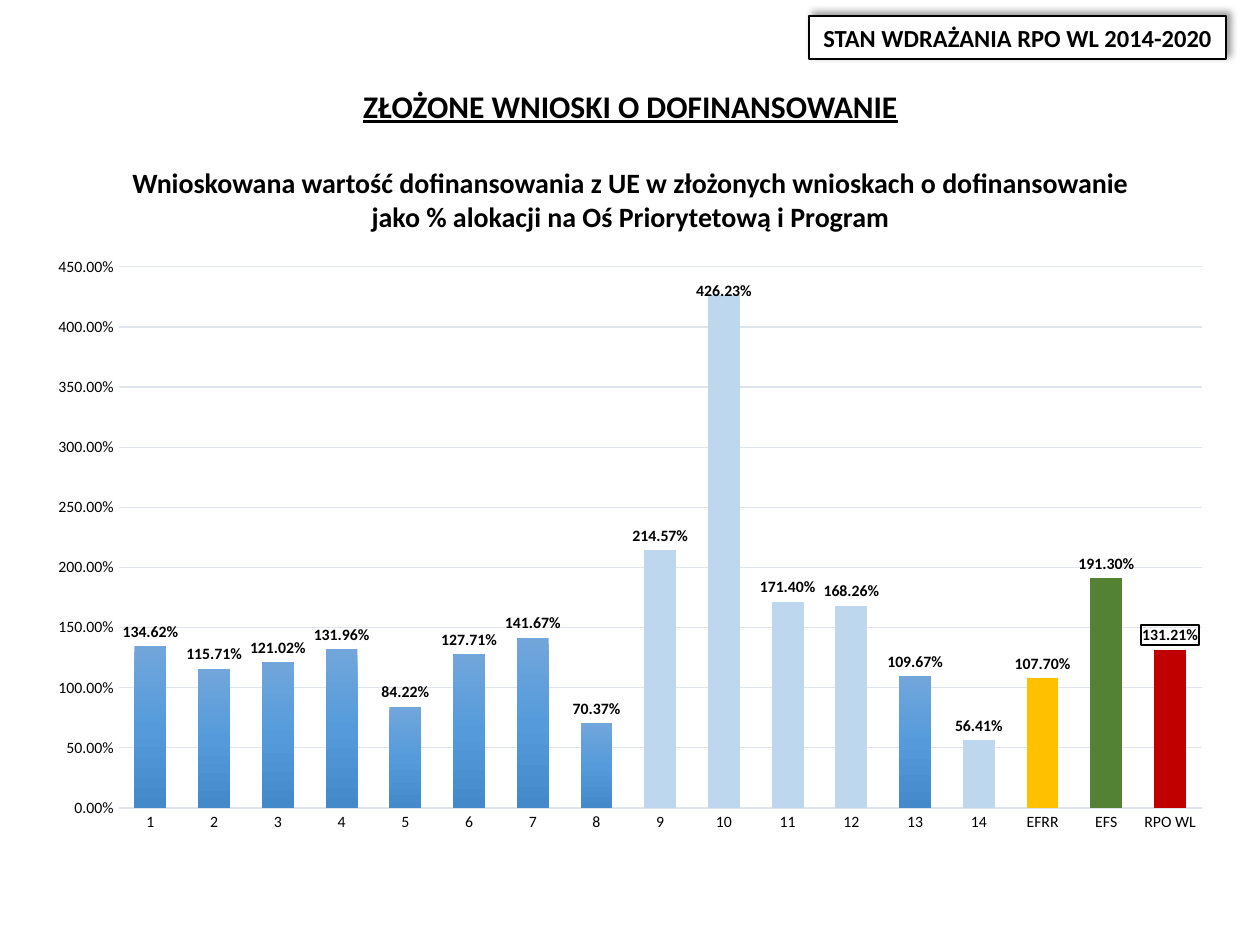
from lxml.etree import fromstring
from pptx import Presentation
from pptx.chart.data import CategoryChartData
from pptx.dml.color import RGBColor
from pptx.enum.chart import XL_CHART_TYPE, XL_LABEL_POSITION, XL_TICK_MARK
from pptx.enum.shapes import MSO_SHAPE
from pptx.enum.text import MSO_ANCHOR, MSO_AUTO_SIZE, PP_ALIGN
from pptx.oxml.ns import nsdecls
from pptx.util import Cm, Pt

FONT = "Calibri"
BLACK = RGBColor(0x00, 0x00, 0x00)
WHITE = RGBColor(0xFF, 0xFF, 0xFF)
GRID = RGBColor(0xE0, 0xE5, 0xEB)
LIGHT_BLUE = RGBColor(0xBD, 0xD7, 0xEE)
GOLD = RGBColor(0xFF, 0xC0, 0x00)
GREEN = RGBColor(0x54, 0x82, 0x35)
RED = RGBColor(0xC0, 0x00, 0x00)
GRADIENT_STOPS = (
    (0, RGBColor(0x71, 0xA6, 0xDB)),
    (50, RGBColor(0x55, 0x9B, 0xDB)),
    (100, RGBColor(0x44, 0x8A, 0xCA)),
)

LEFT, WIDTH = Cm(0.71), Cm(24)
PERCENT = "0.00%"
APPLICATIONS = {
    "1": 1.3462, "2": 1.1571, "3": 1.2102, "4": 1.3196, "5": 0.8422,
    "6": 1.2771, "7": 1.4167, "8": 0.7037, "9": 2.1457, "10": 4.2623,
    "11": 1.714, "12": 1.6826, "13": 1.0967, "14": 0.5641,
    "EFRR": 1.077, "EFS": 1.913, "RPO WL": 1.3121,
}
POINT_COLORS = {
    **dict.fromkeys(("9", "10", "11", "12", "14"), LIGHT_BLUE),
    "EFRR": GOLD, "EFS": GREEN, "RPO WL": RED,
}


def xml(markup):
    """Parse markup that uses the drawing and chart namespaces."""
    tag, rest = markup.split(">", 1)
    slash = "/" if tag.endswith("/") else ""
    return fromstring(f"{tag.rstrip('/')} {nsdecls('a', 'c')}{slash}>{rest}")


def format_font(font, size, bold=False, underline=None):
    """Apply the slide's typeface and text colour."""
    font.name = FONT
    font.size = Pt(size)
    font.bold = bold
    font.underline = underline
    font.color.rgb = BLACK


def write_text(text_frame, text, size, underline=None, line_spacing=None, space_after=0):
    """Write one bold centred paragraph, filling the empty first one if needed."""
    paragraph = text_frame.paragraphs[0]
    if paragraph.runs:
        paragraph = text_frame.add_paragraph()
    paragraph.alignment = PP_ALIGN.CENTER
    paragraph.line_spacing = line_spacing
    paragraph.space_after = Pt(space_after)
    run = paragraph.add_run()
    run.text = text
    format_font(run.font, size, bold=True, underline=underline)


def add_titles(slide):
    """Add the underlined heading and the chart title."""
    text_frame = slide.shapes.add_textbox(LEFT, Cm(1.52), WIDTH, Cm(3.33)).text_frame
    text_frame.word_wrap = True
    text_frame.auto_size = MSO_AUTO_SIZE.SHAPE_TO_FIT_TEXT
    write_text(text_frame, "ZŁOŻONE WNIOSKI O DOFINANSOWANIE", 18,
               underline=True, line_spacing=1.14, space_after=23.6)
    write_text(text_frame, "Wnioskowana wartość dofinansowania z UE "
               "w złożonych wnioskach o dofinansowanie", 16)
    write_text(text_frame, "jako % alokacji na Oś Priorytetową i Program", 16)


def add_banner(slide):
    """Add the framed programme banner with its shadow."""
    shape = slide.shapes.add_shape(
        MSO_SHAPE.RECTANGLE, Cm(16.31), Cm(0.33), Cm(8.41), Cm(0.86))
    shape.fill.solid()
    shape.fill.fore_color.rgb = WHITE
    shape.line.color.rgb = BLACK
    shape.line.width = Pt(1)
    shape.shadow.inherit = False
    shape.element.spPr.find(".//{*}effectLst").append(xml(
        f'<a:outerShdw blurRad="{Pt(4)}" dist="{Pt(3)}" dir="18900000" algn="bl" '
        f'rotWithShape="0"><a:srgbClr val="{BLACK}"><a:alpha val="40000"/>'
        '</a:srgbClr></a:outerShdw>'))
    text_frame = shape.text_frame
    text_frame.word_wrap = False
    text_frame.auto_size = MSO_AUTO_SIZE.SHAPE_TO_FIT_TEXT
    text_frame.vertical_anchor = MSO_ANCHOR.MIDDLE
    write_text(text_frame, "STAN WDRAŻANIA RPO WL 2014-2020", 14)


def format_axis(axis):
    """Remove tick marks and set the axis labels."""
    axis.major_tick_mark = axis.minor_tick_mark = XL_TICK_MARK.NONE
    format_font(axis.tick_labels.font, 9)


def format_line(line, color):
    """Give a chart line its colour and thin width."""
    line.color.rgb = color
    line.width = Pt(0.75)


def fill_columns(series):
    """Give the series its gradient and the special columns their colours."""
    stops = "".join(
        f'<a:gs pos="{position * 1000}"><a:srgbClr val="{color}"/></a:gs>'
        for position, color in GRADIENT_STOPS)
    series.format.fill.background()
    no_fill = series.format.fill._xPr.find("{*}noFill")
    no_fill.getparent().replace(no_fill, xml(
        f'<a:gradFill rotWithShape="1"><a:gsLst>{stops}</a:gsLst>'
        '<a:lin ang="5400000" scaled="0"/></a:gradFill>'))
    for index, category in enumerate(APPLICATIONS):
        if category in POINT_COLORS:
            fill = series.points[index].format.fill
            fill.solid()
            fill.fore_color.rgb = POINT_COLORS[category]


def add_labels(series):
    """Label the columns, lowering the tallest label and framing the total."""
    labels = series.data_labels
    labels.show_value = True
    labels.number_format = PERCENT
    labels.number_format_is_linked = False
    labels.position = XL_LABEL_POSITION.OUTSIDE_END
    format_font(labels.font, 9, bold=True)
    extras = {
        "10": ('<c:layout><c:manualLayout><c:x val="0"/><c:y val="0.016"/>'
               '</c:manualLayout></c:layout>',),
        "RPO WL": (f'<c:spPr><a:ln w="{Pt(1)}"><a:solidFill><a:srgbClr val="{BLACK}"/>'
                   '</a:solidFill></a:ln></c:spPr>',),
    }
    categories = list(APPLICATIONS)
    number_format = f'<c:numFmt formatCode="{PERCENT}" sourceLinked="0"/>'
    for category, (markup,) in extras.items():
        label = series.points[categories.index(category)].data_label
        format_font(label.font, 9, bold=True)
        label.position = XL_LABEL_POSITION.OUTSIDE_END
        element = label._dLbl
        for old in element.findall("{*}spPr"):
            element.remove(old)
        parts = [markup, number_format] if "layout" in markup else [number_format, markup]
        for part in parts:
            element.find("{*}txPr").addprevious(xml(part))


def set_plot_layout(chart):
    """Fix the inner plot area and give the chart a white ground."""
    sizes = {"x": 0.07, "y": 0.04, "w": 0.91, "h": 0.91}
    values = "".join(f'<c:{name} val="{size}"/>' for name, size in sizes.items())
    chart_space = chart._chartSpace
    plot_area = chart_space.chart.plotArea
    for layout in plot_area.findall("{*}layout"):
        plot_area.remove(layout)
    plot_area.insert(0, xml(
        '<c:layout><c:manualLayout><c:layoutTarget val="inner"/>'
        '<c:xMode val="edge"/><c:yMode val="edge"/>'
        f'{values}</c:manualLayout></c:layout>'))
    chart_space.chart.addnext(xml(
        f'<c:spPr><a:solidFill><a:srgbClr val="{WHITE}"/></a:solidFill>'
        '<a:ln><a:noFill/></a:ln></c:spPr>'))


def add_column_chart(slide):
    """Add the chart of requested funding as a share of the allocation."""
    data = CategoryChartData(number_format=PERCENT)
    data.categories = list(APPLICATIONS)
    data.add_series("Series 1", list(APPLICATIONS.values()))
    chart = slide.shapes.add_chart(
        XL_CHART_TYPE.COLUMN_CLUSTERED, LEFT, Cm(4.9), WIDTH, Cm(11.99), data).chart
    chart.has_legend = False
    chart.has_title = False
    format_font(chart.font, 10)
    set_plot_layout(chart)
    format_axis(chart.category_axis)
    format_line(chart.category_axis.format.line, GRID)
    value_axis = chart.value_axis
    format_axis(value_axis)
    value_axis.minimum_scale, value_axis.maximum_scale = 0, 4.5
    value_axis.major_unit = 0.5
    value_axis.tick_labels.number_format = PERCENT
    value_axis.tick_labels.number_format_is_linked = False
    value_axis.format.line.fill.background()
    format_line(value_axis.major_gridlines.format.line, GRID)
    plot = chart.plots[0]
    plot.vary_by_categories = False
    plot.gap_width, plot.overlap = 100, -24
    fill_columns(plot.series[0])
    add_labels(plot.series[0])


def main():
    """Build the slide and save it."""
    presentation = Presentation()
    presentation.slide_width, presentation.slide_height = Cm(25.4), Cm(19.05)
    slide = presentation.slides.add_slide(presentation.slide_layouts[6])
    add_titles(slide)
    add_banner(slide)
    add_column_chart(slide)
    presentation.save("out.pptx")


if __name__ == "__main__":
    main()
